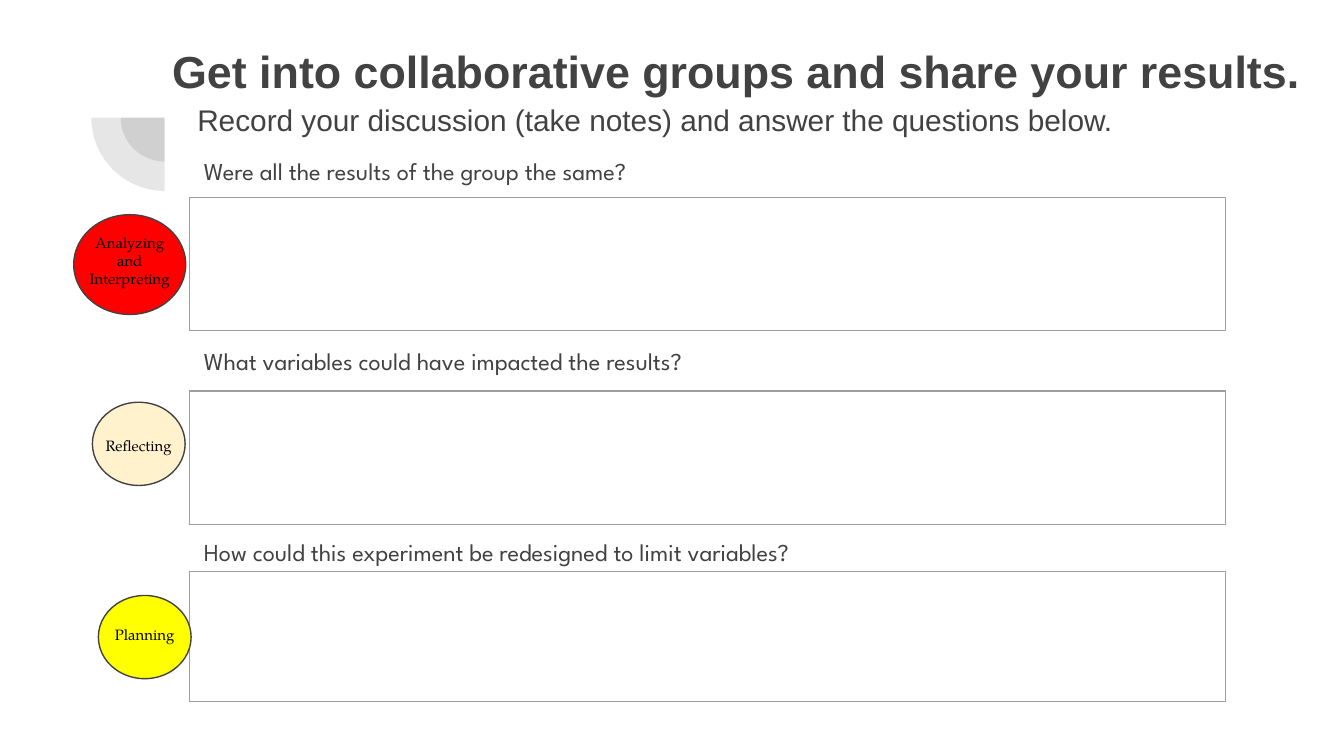
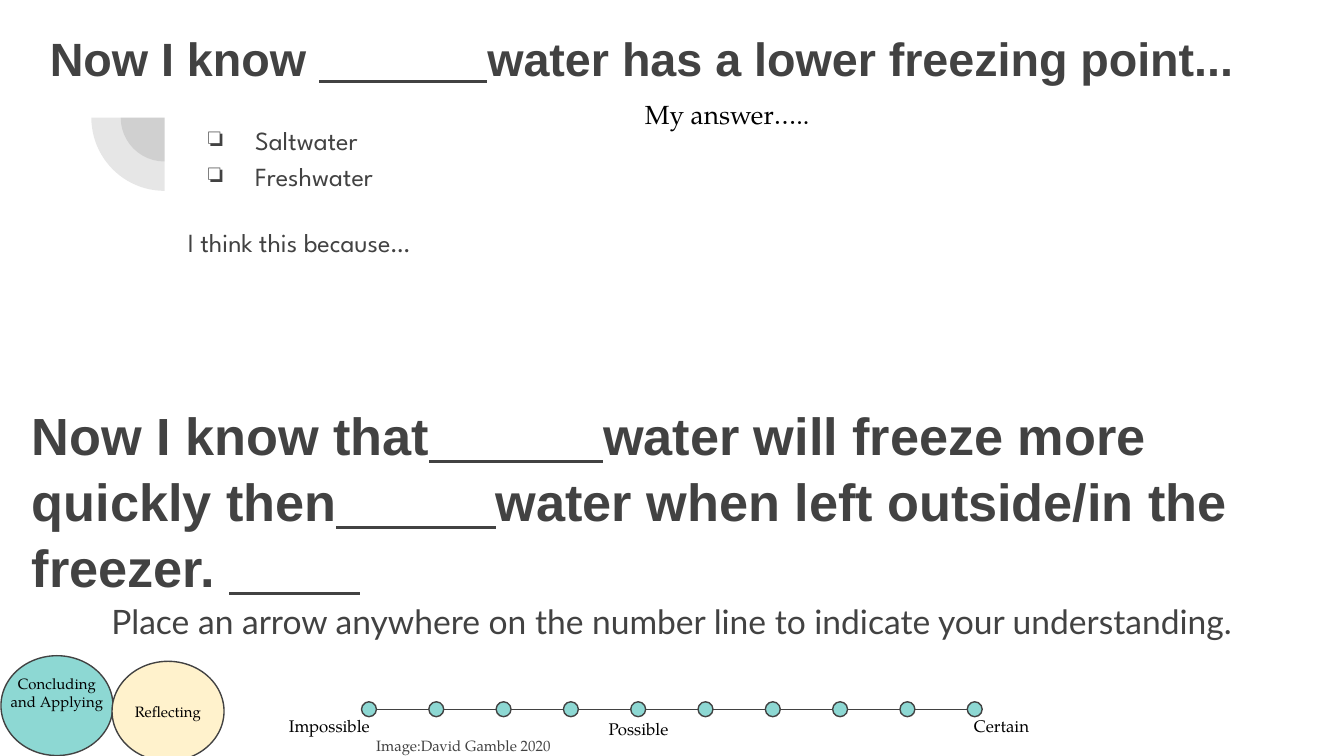
from lxml import etree
from pptx import Presentation
from pptx.dml.color import RGBColor
from pptx.enum.shapes import MSO_CONNECTOR, MSO_SHAPE
from pptx.enum.text import MSO_ANCHOR, MSO_AUTO_SIZE, PP_ALIGN
from pptx.oxml import parse_xml
from pptx.oxml.ns import qn
from pptx.util import Pt

LEFT, CENTER = PP_ALIGN.LEFT, PP_ALIGN.CENTER
TOP, NO_FIT = MSO_ANCHOR.TOP, MSO_AUTO_SIZE.NONE
OVAL, PIE = MSO_SHAPE.OVAL, MSO_SHAPE.PIE
LINE = MSO_CONNECTOR.STRAIGHT
NS = "http://schemas.openxmlformats.org/drawingml/2006/main"


class Theme:
    ink, black, grid = "424242", "000000", "9E9E9E"
    red, cream, yellow, teal = "FF0000", "FFF2CC", "FFFF00", "8DD8D3"
    head, body, note, lato = "Arial", "League Spartan", "TeX Gyre Pagella", "Lato"
    tiny, small, ask, text, sub, lead = 8, 9, 13, 14, 16, 18
    share, know, big = 24, 25, 28
    thin, pad = 0.75, 7.2


def rgb(code):
    return RGBColor.from_string(code)


def pts(*box):
    return [Pt(n) for n in box]


# Text helpers
def style(para, font, size, color, bold=False, align=LEFT):
    para.alignment = align
    for run in para.runs:
        run.font.name, run.font.size, run.font.bold = font, Pt(size), bold
        run.font.color.rgb = rgb(color)


def frame(shape, side=Theme.pad, top=Theme.pad):
    tf = shape.text_frame
    tf.word_wrap, tf.auto_size, tf.vertical_anchor = True, NO_FIT, TOP
    tf.margin_left = tf.margin_right = Pt(side)
    tf.margin_top, tf.margin_bottom = Pt(top), Pt(Theme.pad)
    return tf


def label(slide, box, text, font, size, color=Theme.black, align=LEFT, **pads):
    tf = frame(slide.shapes.add_textbox(*pts(*box)), **pads)
    tf.text = text
    for para in tf.paragraphs:
        style(para, font, size, color, align=align)
    return tf


def heading(shape, box, size, parts):
    """Bold heading; a number in parts is an underlined blank of that width."""
    shape.left, shape.top, shape.width, shape.height = pts(*box)
    para = frame(shape).paragraphs[0]
    para.line_spacing = 1.05
    for part in parts:
        run = para.add_run()
        blank = isinstance(part, int)
        run.text = " " * part if blank else part
        run.font.underline = blank
    style(para, Theme.head, size, Theme.ink, bold=True)


def bullet(para, mark):
    props = para._p.get_or_add_pPr()
    props.set("marL", str(Pt(36)))
    props.set("indent", str(-Pt(25)))
    color = etree.SubElement(props, qn("a:buClr"))
    etree.SubElement(color, qn("a:srgbClr"), val=Theme.ink)
    etree.SubElement(props, qn("a:buChar"), char=mark)


# Shape helpers
def oval(slide, box, fill):
    shape = slide.shapes.add_shape(OVAL, *pts(*box))
    shape.shadow.inherit = False
    shape.fill.solid()
    shape.fill.fore_color.rgb = rgb(fill)
    shape.line.color.rgb = rgb(Theme.ink)
    shape.line.width = Pt(Theme.thin)


def badge(slide, box, fill, text, drop):
    x, y, w, h = box
    oval(slide, box, fill)
    label(slide, (x, y + drop, w, h - drop), text, Theme.note, Theme.tiny,
          align=CENTER, side=5)


def corner(slide, x, y):
    """Two translucent quarter rings around one centre."""
    for size in (47, 78.5):
        box = pts(x - size / 2, y - size / 2, size, size)
        pie = slide.shapes.add_shape(PIE, *box)
        pie.rotation = 270
        pie.adjustments[0], pie.adjustments[1] = 108, 162
        pie.shadow.inherit = False
        pie.line.fill.background()
        pie.fill.solid()
        pie.fill.fore_color.rgb = rgb(Theme.ink)
        tint = pie.fill._xPr.find(".//" + qn("a:srgbClr"))
        etree.SubElement(tint, qn("a:alpha"), val="13000")


def field(slide, box):
    """One-cell table to write an answer in."""
    table = slide.shapes.add_table(1, 1, *pts(*box)).table
    table.first_row = table.horz_banding = False
    cell = table.cell(0, 0)
    props = cell._tc.get_or_add_tcPr()
    for side in ("lnL", "lnR", "lnT", "lnB"):
        props.append(parse_xml(
            f'<a:{side} xmlns:a="{NS}" w="{Pt(Theme.thin)}"><a:solidFill>'
            f'<a:srgbClr val="{Theme.grid}"/></a:solidFill></a:{side}>'))
    cell.fill.background()


def scale(slide, box, count, marks):
    """Number line with evenly spaced dots and captions at some of them."""
    x, y, w, h = box
    mid, step = y + h / 2, (w - h) / (count - 1)
    line = slide.shapes.add_connector(LINE, *pts(x + h / 2, mid, x + w - h / 2, mid))
    line.line.color.rgb = rgb(Theme.ink)
    line.line.width = Pt(Theme.thin)
    etree.SubElement(line._element.spPr, qn("a:effectLst"))
    for i in range(count):
        oval(slide, (x + i * step, y, h, h), Theme.teal)
    for text, left, top, wide in marks:
        label(slide, (x + left, y + top, wide, 16.5), text, Theme.note, Theme.small)


# Slides
def start(deck):
    slide = deck.slides.add_slide(deck.slide_layouts[5])
    corner(slide, 88.2, 63)
    return slide


def share(deck):
    slide = start(deck)
    heading(slide.shapes.title, (85, 15, 630, 78.5), Theme.share,
            ["Get into collaborative groups and share your results."])

    # Questions, spaced to sit above the answer fields
    asks = ("Were all the results of the group the same?",
            "What variables could have impacted the results?",
            "How could this experiment be redesigned to limit variables?")
    tf = label(slide, (102.2, 74.2, 553.7, 326), "\n".join(asks),
               Theme.body, Theme.ask, Theme.ink)
    for i, para in enumerate(tf.paragraphs):
        para.line_spacing = 1.15
        para.space_before = Pt(84 if i else 0)
    label(slide, (98.6, 36.7, 578, 48),
          "Record your discussion (take notes) and answer the questions below.",
          Theme.head, Theme.sub, Theme.ink, top=18)

    # Answer fields and skill badges
    for y, h in ((105.8, 71.3), (209.5, 71.3), (306, 70)):
        field(slide, (101.5, y, 555, h))
    for box, fill, text, drop in (
            ((39.5, 115, 60, 53.5), Theme.red, "Analyzing and Interpreting", 3),
            ((49.5, 215.5, 49.7, 44.6), Theme.cream, "Reflecting", 11),
            ((52.7, 319, 49.7, 44.6), Theme.yellow, "Planning", 9)):
        badge(slide, box, fill, text, drop)


def know(deck):
    slide = start(deck)
    heading(slide.shapes.title, (19.5, 7.2, 671, 45.4), Theme.know,
            ["Now I know ", 13, "water has a lower freezing point..."])

    # Choices
    tf = label(slide, (93.6, 57, 337.7, 142.6),
               "Saltwater\nFreshwater\nI think this because…",
               Theme.body, Theme.text, Theme.ink)
    for para in tf.paragraphs:
        para.line_spacing = 1.15
    for para in tf.paragraphs[:2]:
        bullet(para, "❏")
    tf.paragraphs[2].space_before = Pt(16)
    label(slide, (338.4, 45.4, 193, 39), "My answer…..", Theme.note, Theme.text)

    # Second statement
    box = (10, 207.4, 671, 45.4)
    heading(slide.shapes.add_textbox(*pts(*box)), box, Theme.big,
            ["Now I know that", 12, "water will freeze more quickly then", 11,
             "water when left outside/in the freezer. ", 9])
    label(slide, (0, 314.6, 720, 50.4),
          "Place an arrow anywhere on the number line to indicate your understanding.",
          Theme.lato, Theme.lead, Theme.ink, CENTER)

    # Number line and badges
    scale(slide, (193.7, 376, 332.5, 8), 10,
          (("Impossible", -46, 0, 65.5), ("Possible", 125.3, 2, 47.5),
           ("Certain", 321, 0, 47.5)))
    label(slide, (194.4, 388.8, 336, 11.5), "Image:David Gamble 2020",
          Theme.note, Theme.tiny, Theme.ink)
    badge(slide, (0.5, 351.3, 60, 53.5), Theme.teal, "Concluding and Applying", 3)
    badge(slide, (60, 354.3, 60, 53.5), Theme.cream, "Reflecting", 15)


def main():
    deck = Presentation()
    deck.slide_width, deck.slide_height = pts(720, 405)
    share(deck)
    know(deck)
    deck.save("out.pptx")


if __name__ == "__main__":
    main()
